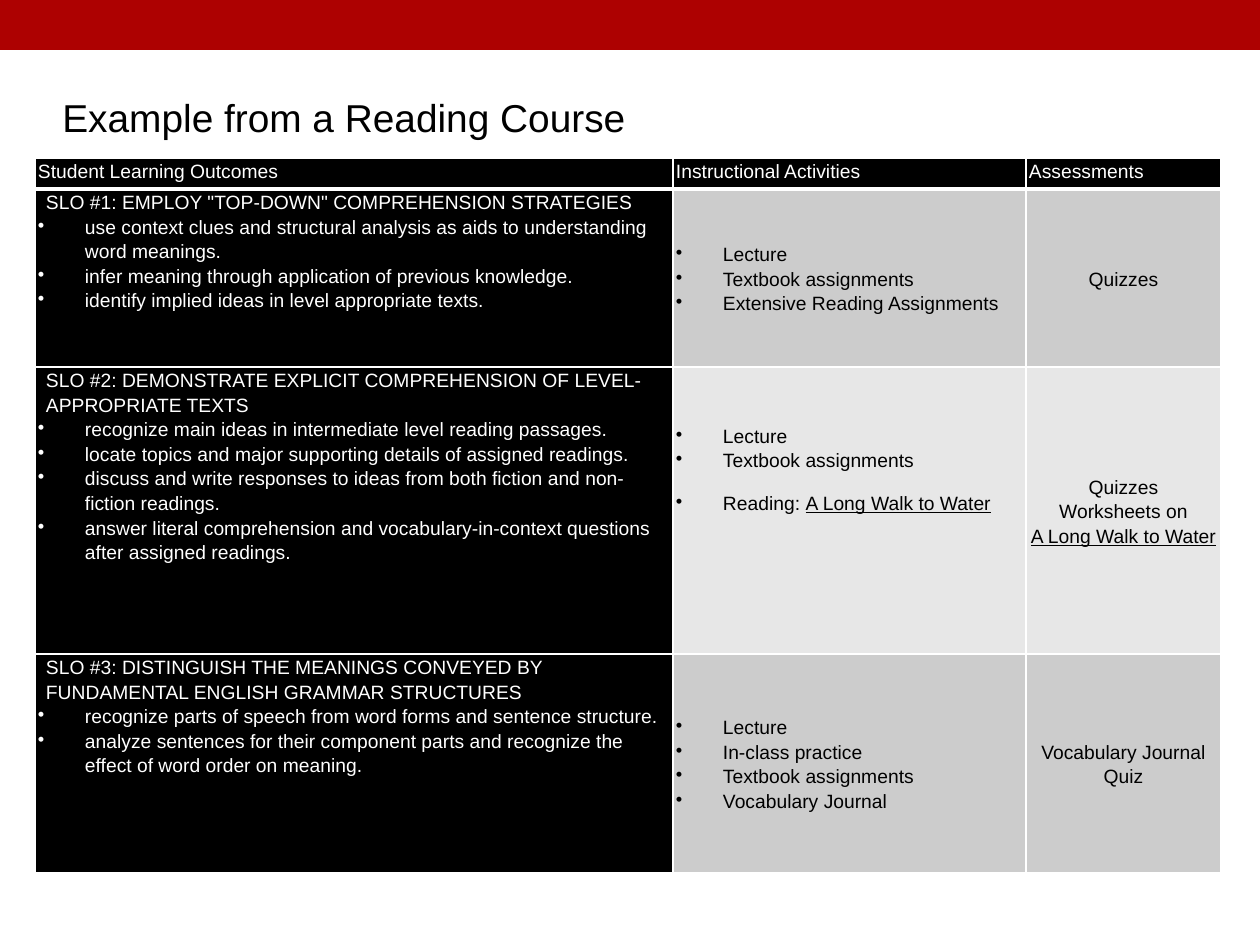
from pptx import Presentation
from pptx.dml.color import RGBColor
from pptx.enum.shapes import MSO_SHAPE
from pptx.enum.text import MSO_ANCHOR, PP_ALIGN
from pptx.oxml.ns import qn
from pptx.util import Emu, Pt
from lxml import etree

RECT = MSO_SHAPE.RECTANGLE
TOP, MIDDLE = MSO_ANCHOR.TOP, MSO_ANCHOR.MIDDLE
LEFT, CENTER = PP_ALIGN.LEFT, PP_ALIGN.CENTER

THEME = {
    "font": "Arial", "title_size": 22.2, "cell_size": 11,
    "red": "AD0101", "black": "000000", "white": "FFFFFF",
    "bands": ["CCCCCC", "E7E7E7", "CCCCCC"],
}
BOOK = "A Long Walk to Water"
HEADERS = ["Student Learning Outcomes", "Instructional Activities", "Assessments"]
# Each row: outcome heading, outcome bullets, activities, assessments
ROWS = [
    ('SLO #1: EMPLOY "TOP-DOWN" COMPREHENSION STRATEGIES',
     ["use context clues and structural analysis as aids to understanding word meanings.",
      "infer meaning through application of previous knowledge.",
      "identify implied ideas in level appropriate texts."],
     ["Lecture", "Textbook assignments", "Extensive Reading Assignments"],
     ["Quizzes"]),
    ("SLO #2: DEMONSTRATE EXPLICIT COMPREHENSION OF LEVEL-APPROPRIATE TEXTS",
     ["recognize main ideas in intermediate level reading passages.",
      "locate topics and major supporting details of assigned readings.",
      "discuss and write responses to ideas from both fiction and non-fiction readings.",
      "answer literal comprehension and vocabulary-in-context questions after assigned readings."],
     ["Lecture", "Textbook assignments", "Reading: " + BOOK],
     ["Quizzes", "Worksheets on", BOOK]),
    ("SLO #3: DISTINGUISH THE MEANINGS CONVEYED BY FUNDAMENTAL ENGLISH GRAMMAR STRUCTURES",
     ["recognize parts of speech from word forms and sentence structure.",
      "analyze sentences for their component parts and recognize the effect of word order on meaning."],
     ["Lecture", "In-class practice", "Textbook assignments", "Vocabulary Journal"],
     ["Vocabulary Journal", "Quiz"]),
]


def px(n):
    return Emu(round(n * 914400 / 126))


def fill_cell(cell, lines, fill, color, anchor=TOP, align=LEFT, bottom_border=1):
    """Style a cell and write its lines, given as (text, kind) pairs."""
    tcPr = cell._tc.get_or_add_tcPr()
    for side in ("lnL", "lnR", "lnT", "lnB"):
        width = bottom_border if side == "lnB" else 1
        ln = etree.SubElement(tcPr, qn("a:" + side), w=str(Pt(width)))
        solid = etree.SubElement(ln, qn("a:solidFill"))
        etree.SubElement(solid, qn("a:srgbClr"), val=THEME["white"])
    cell.fill.solid()
    cell.fill.fore_color.rgb = RGBColor.from_string(fill)
    cell.margin_left = cell.margin_right = px(3)
    cell.margin_top = cell.margin_bottom = 0
    cell.vertical_anchor = anchor
    tf = cell.text_frame
    for i, (text, kind) in enumerate(lines):
        p = tf.paragraphs[0] if i == 0 else tf.add_paragraph()
        p.alignment = align
        p.line_spacing = 1.15
        pPr = p._p.get_or_add_pPr()
        if kind == "bullet":
            pPr.set("marL", str(px(47)))
            pPr.set("indent", str(-px(47)))
            etree.SubElement(pPr, qn("a:buChar"), char="•")
        elif kind == "heading":
            pPr.set("marL", str(px(8)))
        lead, title, _ = text.partition(BOOK)
        for part in filter(None, (lead, title)):
            r = p.add_run()
            r.text = part
            r.font.name = THEME["font"]
            r.font.size = Pt(THEME["cell_size"])
            r.font.color.rgb = RGBColor.from_string(color)
            if part == BOOK:
                r.font.underline = True


prs = Presentation()
prs.slide_width, prs.slide_height = px(1260), px(945)
s = prs.slides.add_slide(prs.slide_layouts[6])

band = s.shapes.add_shape(RECT, 0, 0, px(1260), px(50))
band.shadow.inherit = False
band.fill.solid()
band.fill.fore_color.rgb = RGBColor.from_string(THEME["red"])
band.line.fill.background()

title = s.shapes.add_textbox(px(50), px(84), px(1086), px(53))
tf = title.text_frame
tf.word_wrap = True
tf.margin_top = px(10)
tf.text = "Example from a Reading Course"
font = tf.paragraphs[0].runs[0].font
font.name = THEME["font"]
font.size = Pt(THEME["title_size"])
font.color.rgb = RGBColor.from_string(THEME["black"])

col_widths = [638, 353, 195]
row_heights = [31, 178, 287, 219]
table = s.shapes.add_table(len(row_heights), len(col_widths), px(35), px(158),
                           px(sum(col_widths)), px(sum(row_heights))).table
table.first_row = table.horz_banding = False
for col, width in zip(table.columns, col_widths):
    col.width = px(width)
for row, height in zip(table.rows, row_heights):
    row.height = px(height)

for c, text in enumerate(HEADERS):
    fill_cell(table.cell(0, c), [(text, "plain")], THEME["black"], THEME["white"],
              bottom_border=3)
for n, (heading, outcomes, activities, assessments) in enumerate(ROWS, 1):
    shade = THEME["bands"][n - 1]
    fill_cell(table.cell(n, 0), [(heading, "heading")] + [(t, "bullet") for t in outcomes],
              THEME["black"], THEME["white"])
    fill_cell(table.cell(n, 1), [(t, "bullet") for t in activities],
              shade, THEME["black"], MIDDLE)
    fill_cell(table.cell(n, 2), [(t, "plain") for t in assessments],
              shade, THEME["black"], MIDDLE, CENTER)

# The reading activity stands apart, and its list sits above the middle
reading_cell = table.cell(2, 1)
reading_cell.margin_bottom = px(84)
reading_cell.text_frame.paragraphs[1].space_after = Pt(10)

prs.save("out.pptx")
